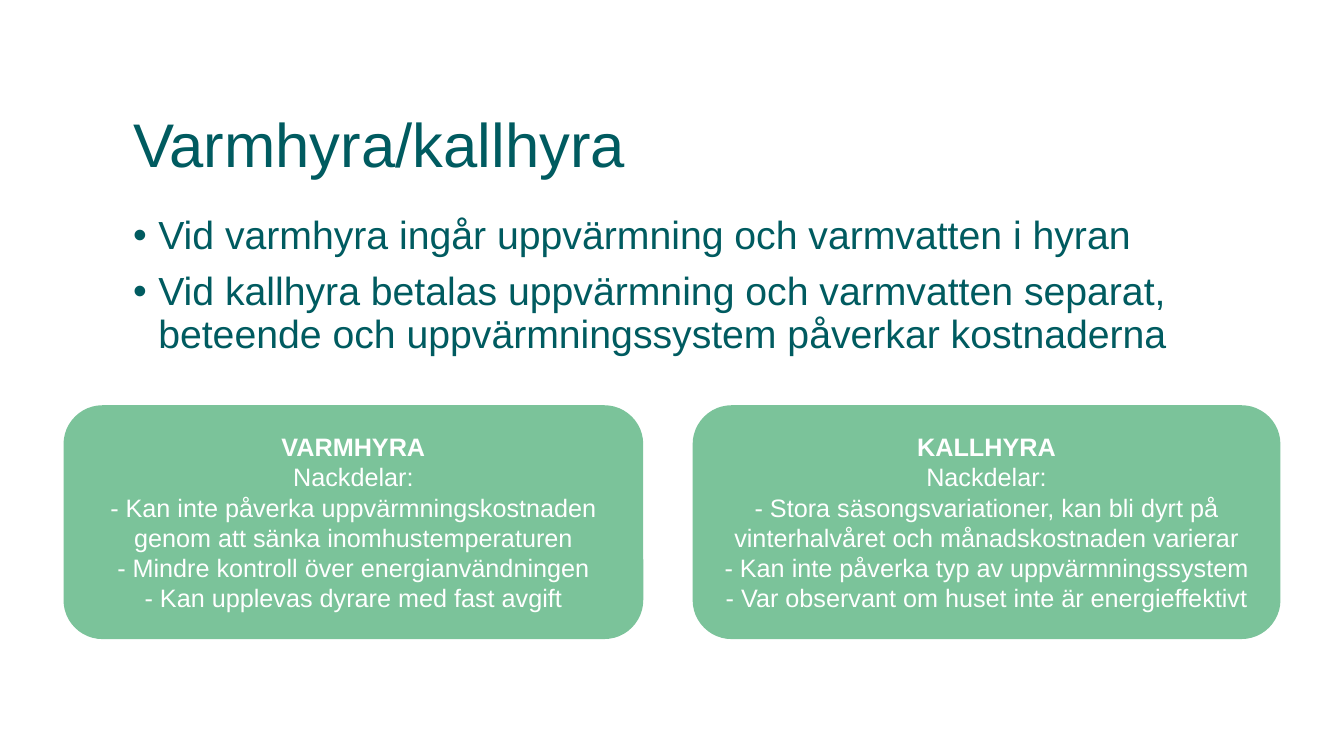
from lxml import etree
from pptx import Presentation, util as u
from pptx.dml.color import RGBColor
from pptx.enum import shapes, text
from pptx.oxml.ns import qn


def color(value):
    return RGBColor.from_string(value)


class SlideBuilder:
    font = "Arial"
    dark = "005B60"
    green = "7BC39A"
    white = "FFFFFF"

    def __init__(self, prs):
        self.s = prs.slides.add_slide(prs.slide_layouts[1])
        self.s.background.fill.solid()
        self.s.background.fill.fore_color.rgb = color(self.white)

    def place(self, sp, left, top, width, height):
        sp.left, sp.top = u.Inches(left), u.Inches(top)
        sp.width, sp.height = u.Inches(width), u.Inches(height)

    def style(self, p, size, hex_color, align, bold=False):
        p.alignment = align
        for r in p.runs:
            r.font.name = self.font
            r.font.size = u.Pt(size)
            r.font.bold = bold
            r.font.color.rgb = color(hex_color)

    def title(self, content, *box):
        sp = self.s.shapes.title
        self.place(sp, *box)
        tf = sp.text_frame
        tf.text = content
        tf.auto_size = text.MSO_AUTO_SIZE.NONE
        tf.vertical_anchor = text.MSO_ANCHOR.MIDDLE
        p = tf.paragraphs[0]
        p.line_spacing = 0.9
        self.style(p, 44, self.dark, text.PP_ALIGN.LEFT)

    def bullets(self, items, *box):
        sp = self.s.placeholders[1]
        self.place(sp, *box)
        tf = sp.text_frame
        tf.text = "\n".join(items)
        tf.auto_size = text.MSO_AUTO_SIZE.NONE
        for i, p in enumerate(tf.paragraphs):
            pPr = p._p.get_or_add_pPr()
            pPr.set("marL", str(u.Inches(0.25)))
            pPr.set("indent", str(u.Inches(-0.25)))
            etree.SubElement(pPr, qn("a:buFont"), typeface=self.font)
            etree.SubElement(pPr, qn("a:buChar"), char="•")
            p.line_spacing = 0.9
            p.space_before = u.Pt(10 if i else 0)
            self.style(p, 28, self.dark, text.PP_ALIGN.LEFT)

    def card(self, heading, lines, *box):
        sp = self.s.shapes.add_shape(
            shapes.MSO_SHAPE.ROUNDED_RECTANGLE, *map(u.Inches, box))
        sp.shadow.inherit = False
        sp.fill.solid()
        sp.fill.fore_color.rgb = color(self.green)
        sp.line.fill.background()
        tf = sp.text_frame
        tf.word_wrap = True
        tf.vertical_anchor = text.MSO_ANCHOR.MIDDLE
        tf.text = "\n".join([heading, "Nackdelar:\v" + lines[0], *lines[1:]])
        for i, p in enumerate(tf.paragraphs):
            self.style(p, 18, self.white, text.PP_ALIGN.CENTER, bold=i == 0)


def main():
    prs = Presentation()
    prs.slide_width, prs.slide_height = u.Inches(13.33), u.Inches(7.5)
    slide = SlideBuilder(prs)
    slide.title("Varmhyra/kallhyra", 1.22, 0.78, 11.15, 1.37)
    slide.bullets([
        "Vid varmhyra ingår uppvärmning och varmvatten i hyran",
        "Vid kallhyra betalas uppvärmning och varmvatten separat, "
        "beteende och uppvärmningssystem påverkar kostnaderna",
    ], 1.22, 2.09, 11.15, 4.24)
    slide.card("VARMHYRA", [
        "- Kan inte påverka uppvärmningskostnaden "
        "genom att sänka inomhustemperaturen",
        "- Mindre kontroll över energianvändningen",
        "- Kan upplevas dyrare med fast avgift",
    ], 0.63, 4.02, 5.75, 2.32)
    slide.card("KALLHYRA", [
        "- Stora säsongsvariationer, kan bli dyrt på "
        "vinterhalvåret och månadskostnaden varierar",
        "- Kan inte påverka typ av uppvärmningssystem",
        "- Var observant om huset inte är energieffektivt",
    ], 6.87, 4.02, 5.83, 2.32)
    prs.save("out.pptx")


if __name__ == "__main__":
    main()
